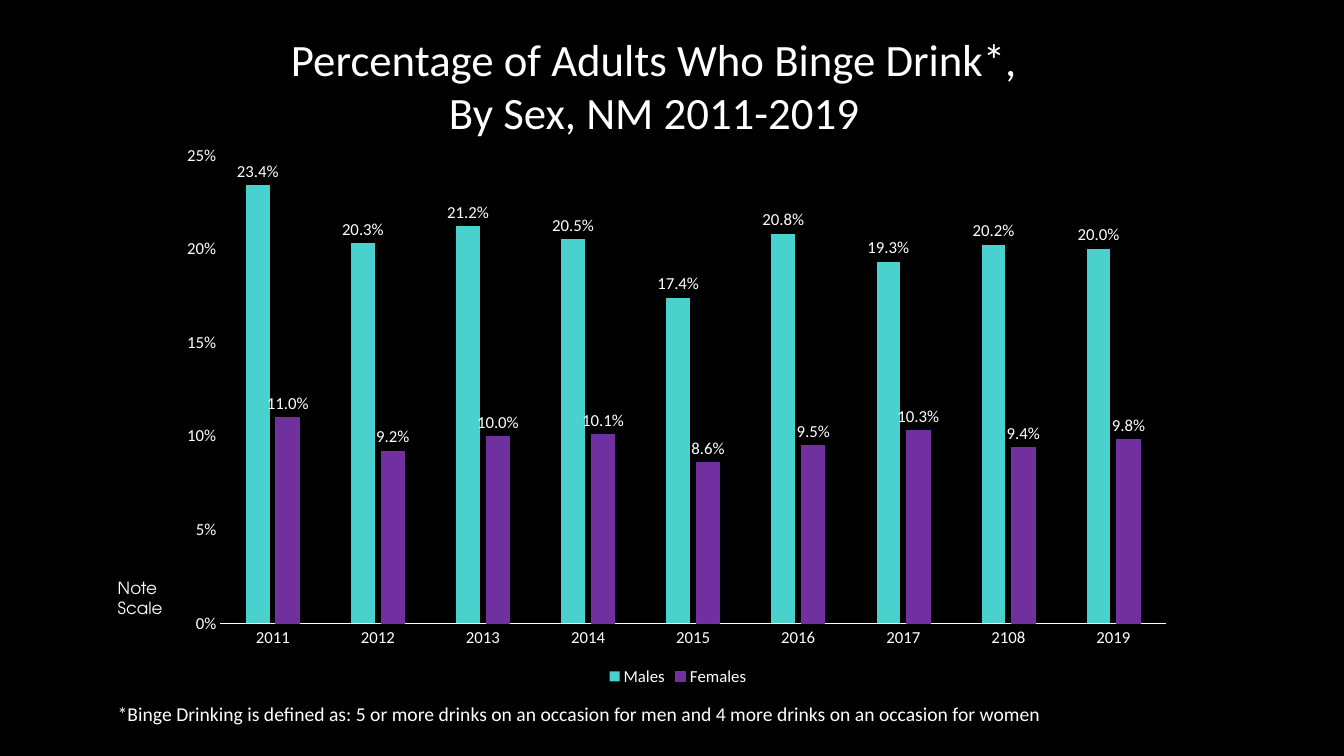
"""Build the slide on binge drinking among adults in New Mexico by sex."""
from dataclasses import dataclass

from lxml import etree
from pptx import Presentation
from pptx import util as u
from pptx.chart import data as chart_data
from pptx.dml import color
from pptx.enum import chart as ch
from pptx.enum import text as tx
from pptx.oxml import ns


@dataclass(frozen=True)
class Theme:
    background: str = "000000"
    ink: str = "FFFFFF"
    males: str = "49D1CD"
    females: str = "7030A0"
    font: str = "Calibri"
    note_font: str = "TeX Gyre Adventor"
    title_size: int = 32
    footnote_size: int = 14
    small_size: int = 12
    hairline: float = 0.75


@dataclass(frozen=True)
class Box:
    left: float
    top: float
    width: float
    height: float

    def points(self) -> tuple:
        return tuple(u.Pt(n) for n in (self.left, self.top, self.width, self.height))


@dataclass(frozen=True)
class Caption:
    box: Box
    wording: str
    size: int
    font: str


@dataclass(frozen=True)
class Sex:
    name: str
    fill: str
    shares: tuple
    outlined: bool = False


THEME = Theme()
YEARS = ("2011", "2012", "2013", "2014", "2015", "2016", "2017", "2108", "2019")
SEXES = (
    Sex("Males", THEME.males,
        (0.234, 0.203, 0.212, 0.205, 0.174, 0.208, 0.193, 0.202, 0.2)),
    Sex("Females", THEME.females,
        (0.11, 0.092, 0.1, 0.101, 0.086, 0.095, 0.103, 0.094, 0.098), True),
)
HEADLINE = Caption(Box(112.3, 18.7, 710, 106.6),
                   "Percentage of Adults Who Binge Drink*,\nBy Sex, NM 2011-2019",
                   THEME.title_size, THEME.font)
FOOTNOTE = Caption(Box(77, 497.5, 802.8, 24.5),
                   "*Binge Drinking is defined as: 5 or more drinks on an occasion "
                   "for men and 4 more drinks on an occasion for women",
                   THEME.footnote_size, THEME.font)
SCALE_NOTE = Caption(Box(77, 409, 51.8, 36), "Note Scale",
                     THEME.small_size, THEME.note_font)
CHART_BOX = Box(121, 95, 726.5, 398.2)
PLOT_SHARES = {"x": 0.05, "y": 0.04, "w": 0.93, "h": 0.84}


def rgb(code: str) -> color.RGBColor:
    return color.RGBColor.from_string(code)


def apply(target, formats: dict) -> None:
    for attribute, value in formats.items():
        setattr(target, attribute, value)


def style_font(font, size: float = THEME.small_size, name: str = THEME.font) -> None:
    apply(font, {"size": u.Pt(size), "name": name, "bold": False})
    font.color.rgb = rgb(THEME.ink)


def write_caption(shape, caption: Caption, align=tx.PP_ALIGN.LEFT) -> None:
    places = ("left", "top", "width", "height")
    apply(shape, dict(zip(places, caption.box.points())))
    frame = shape.text_frame
    frame.text = caption.wording
    apply(frame, {"word_wrap": True, "auto_size": tx.MSO_AUTO_SIZE.NONE,
                  "vertical_anchor": tx.MSO_ANCHOR.TOP})
    for line in frame.paragraphs:
        line.alignment = align
        for run in line.runs:
            style_font(run.font, caption.size, caption.font)


def place_plot(chart) -> None:
    plot_area = chart.plots[0]._element.getparent()
    for old in plot_area.findall(ns.qn("c:layout")):
        plot_area.remove(old)
    layout = etree.Element(ns.qn("c:layout"))
    manual = etree.SubElement(layout, ns.qn("c:manualLayout"))
    settings = {"layoutTarget": "inner", "xMode": "edge", "yMode": "edge", **PLOT_SHARES}
    for tag, value in settings.items():
        etree.SubElement(manual, ns.qn(f"c:{tag}")).set("val", str(value))
    plot_area.insert(0, layout)


def style_axes(chart) -> None:
    years, shares = chart.category_axis, chart.value_axis
    for axis in (years, shares):
        apply(axis, {"major_tick_mark": ch.XL_TICK_MARK.NONE,
                     "minor_tick_mark": ch.XL_TICK_MARK.NONE,
                     "has_major_gridlines": False})
        style_font(axis.tick_labels.font)
    years.format.line.color.rgb = rgb(THEME.ink)
    years.format.line.width = u.Pt(THEME.hairline)
    apply(shares, {"minimum_scale": 0, "maximum_scale": 0.25, "major_unit": 0.05})
    apply(shares.tick_labels, {"number_format": "0%", "number_format_is_linked": False})
    shares.format.line.fill.background()


def style_series(bars, sex: Sex) -> None:
    bars.format.fill.solid()
    bars.format.fill.fore_color.rgb = rgb(sex.fill)
    if sex.outlined:
        bars.format.line.color.rgb = rgb(sex.fill)
        bars.format.line.width = u.Pt(THEME.hairline)
    else:
        bars.format.line.fill.background()
    labels = bars.data_labels
    apply(labels, {"show_value": True, "number_format": "0.0%",
                   "number_format_is_linked": False,
                   "position": ch.XL_LABEL_POSITION.OUTSIDE_END})
    style_font(labels.font)


def add_share_chart(slide) -> None:
    shares = chart_data.CategoryChartData(number_format="0.0%")
    shares.categories = YEARS
    for sex in SEXES:
        shares.add_series(sex.name, sex.shares)
    chart = slide.shapes.add_chart(
        ch.XL_CHART_TYPE.COLUMN_CLUSTERED, *CHART_BOX.points(), shares).chart
    apply(chart, {"has_title": False, "has_legend": True})
    style_font(chart.font)
    apply(chart.legend, {"position": ch.XL_LEGEND_POSITION.BOTTOM,
                         "include_in_layout": False})
    style_font(chart.legend.font)
    columns = chart.plots[0]
    apply(columns, {"gap_width": 219, "overlap": -27, "vary_by_categories": False})
    for bars, sex in zip(columns.series, SEXES):
        style_series(bars, sex)
    style_axes(chart)
    place_plot(chart)


def main() -> None:
    deck = Presentation()
    apply(deck, {"slide_width": u.Pt(960), "slide_height": u.Pt(540)})
    slide = deck.slides.add_slide(deck.slide_layouts.get_by_name("Title Only"))
    slide.background.fill.solid()
    slide.background.fill.fore_color.rgb = rgb(THEME.background)
    write_caption(slide.shapes.title, HEADLINE, tx.PP_ALIGN.CENTER)
    write_caption(slide.shapes.add_textbox(*FOOTNOTE.box.points()), FOOTNOTE)
    add_share_chart(slide)
    write_caption(slide.shapes.add_textbox(*SCALE_NOTE.box.points()), SCALE_NOTE)
    deck.save("out.pptx")


if __name__ == "__main__":
    main()
